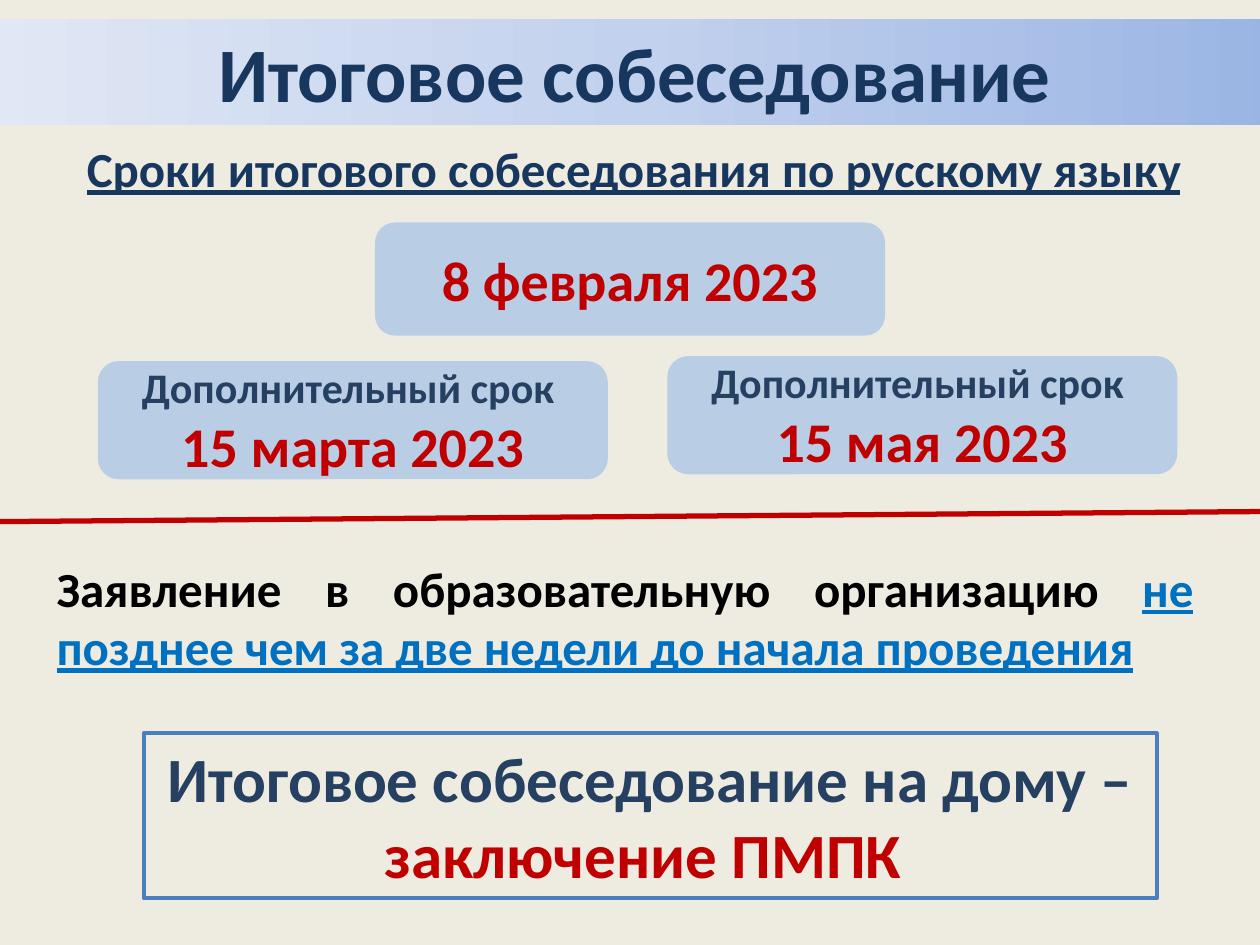
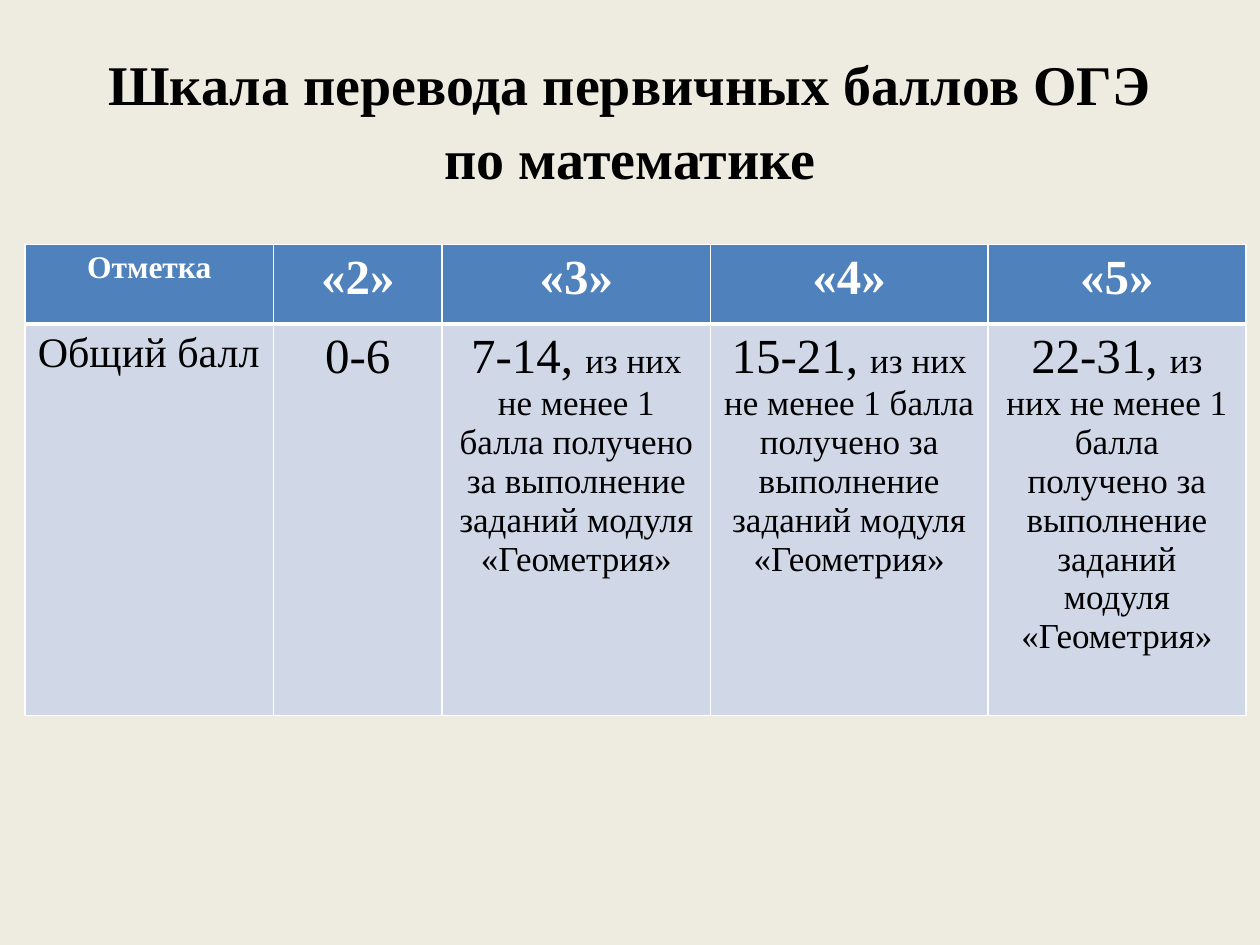
import copy
from dataclasses import dataclass

import lxml.etree
import pptx
import pptx.dml.color
import pptx.enum.shapes
import pptx.enum.text
import pptx.oxml.ns
import pptx.util

# Slide grid: 100 columns by 75 rows
COLUMNS, ROWS = 100, 75
UNIT = pptx.util.Inches(0.1)

COLORS = {
    "page": "EEECE1", "navy": "17375E", "slate": "254061", "red": "C00000",
    "link": "0070C0", "black": "000000", "white": "FFFFFF", "date": "B9CDE5",
    "frame": "4B7EBC", "header": "4F81BD", "body": "D0D8E8",
    "band_dark": "9AB5E4", "band_mid": "C2D1ED", "band_light": "E1E8F5",
}
SANS, SERIF = "Calibri", "Times New Roman"
ALIGN = pptx.enum.text.PP_ALIGN
ANCHOR = pptx.enum.text.MSO_ANCHOR
SHAPE = pptx.enum.shapes.MSO_SHAPE


@dataclass
class Box:
    left: float
    top: float
    width: float
    height: float

    def inner(self, left, top, width, height):
        """A box placed from this box's corner, in grid units."""
        return Box(self.left + left, self.top + top, width, height)

    def lengths(self):
        return [round(n * UNIT) for n in (self.left, self.top, self.width, self.height)]


def color(name):
    return pptx.dml.color.RGBColor.from_string(COLORS[name])


def qn(tag):
    return pptx.oxml.ns.qn(tag)


def add_run(paragraph, text, size=28, ink="black", font=SANS, bold=True, underline=False):
    run = paragraph.add_run()
    run.text = text
    run.font.size = pptx.util.Pt(size)
    run.font.name = font
    run.font.bold = bold
    run.font.color.rgb = color(ink)
    if underline:
        run.font.underline = True


def write(frame, paragraphs, align=ALIGN.CENTER, anchor=ANCHOR.TOP, wrap=True,
          spacing=None, **style):
    """Each paragraph is a list of (text, format) runs; style is their common format."""
    frame.word_wrap = wrap
    frame.vertical_anchor = anchor
    for i, runs in enumerate(paragraphs):
        paragraph = frame.add_paragraph() if i else frame.paragraphs[0]
        paragraph.alignment = align
        if spacing:
            paragraph.line_spacing = spacing
        for text, own in runs:
            if text == "\v":
                paragraph.add_line_break()
            else:
                add_run(paragraph, text, **{**style, **own})


def add_block(slide, box, kind=SHAPE.RECTANGLE, fill=None, line=None, weight=2):
    block = slide.shapes.add_shape(kind, *box.lengths())
    block.shadow.inherit = False
    if fill:
        block.fill.solid()
        block.fill.fore_color.rgb = color(fill)
    else:
        block.fill.background()
    if line:
        block.line.color.rgb = color(line)
        block.line.width = pptx.util.Pt(weight)
    else:
        block.line.fill.background()
    return block


def add_text(slide, box, paragraphs, **style):
    write(slide.shapes.add_textbox(*box.lengths()).text_frame, paragraphs, **style)


def new_slide(deck):
    slide = deck.slides.add_slide(deck.slide_layouts[6])
    slide.background.fill.solid()
    slide.background.fill.fore_color.rgb = color("page")
    return slide


# Interview slide regions
def heading_band(slide, box):
    band = add_block(slide, box)
    band.fill.gradient()
    band.fill.gradient_angle = 180
    stop_list = next(band._element.iter(qn("a:gsLst")))
    stop_list.insert(1, copy.deepcopy(stop_list[0]))
    shades = [(0, "band_dark"), (0.5, "band_mid"), (1, "band_light")]
    for stop, (position, shade) in zip(band.fill.gradient_stops, shades):
        stop.position = position
        stop.color.rgb = color(shade)
    write(band.text_frame, [[("Итоговое собеседование", {})]], size=44, ink="navy")


def interview_dates(slide, box):
    add_text(slide, box.inner(0, 0, 89.8, 5.7),
             [[("Сроки итогового собеседования по русскому языку", {})]],
             align=ALIGN.LEFT, wrap=False, ink="navy", underline=True)
    dates = [
        (24, 7.3, 8.7, "8 февраля 2023", False),
        (2, 18.3, 9.1, "15 марта 2023", True),
        (47.2, 17.9, 9.1, "15 мая 2023", True),
    ]
    for left, top, height, date, extra in dates:
        card = add_block(slide, box.inner(left, top, 40.2, height),
                         SHAPE.ROUNDED_RECTANGLE, fill="date", line="date")
        label = [[("Дополнительный срок ", {"size": 24, "ink": "slate"})]] if extra else []
        write(card.text_frame, label + [[(date, {})]],
              anchor=ANCHOR.MIDDLE, size=32, ink="red")


def divider(slide, box):
    left, top, width, height = box.lengths()
    rule = slide.shapes.add_connector(pptx.enum.shapes.MSO_CONNECTOR.STRAIGHT,
                                      left, top + height, left + width, top)
    rule.line.color.rgb = color("red")
    rule.line.width = pptx.util.Pt(3)
    lxml.etree.SubElement(rule._element.spPr, qn("a:effectLst"))


def application(slide, box):
    add_text(slide, box, [[
        ("Заявление в образовательную организацию ", {}),
        ("не позднее чем за две недели до начала проведения",
         {"ink": "link", "underline": True}),
    ]], align=ALIGN.JUSTIFY)


def home_interview(slide, box):
    frame = add_block(slide, box, line="frame", weight=2.25)
    write(frame.text_frame, [[
        ("Итоговое собеседование на дому – ", {"ink": "slate"}),
        ("заключение ПМПК ", {"ink": "red"}),
    ]], size=36)


# Score scale slide regions
def scale_title(slide, box):
    add_text(slide, box, [[("Шкала перевода первичных баллов ОГЭ", {}), ("\v", {}),
                           ("по математике", {})]],
             anchor=ANCHOR.MIDDLE, spacing=1.1, size=32, font=SERIF)


def set_borders(cell, **weights):
    properties = cell._tc.get_or_add_tcPr()
    for i, side in enumerate("LRTB"):
        border = lxml.etree.Element(qn(f"a:ln{side}"),
                                    w=str(int(pptx.util.Pt(weights.get(side, 1)))))
        fill = lxml.etree.SubElement(border, qn("a:solidFill"))
        lxml.etree.SubElement(fill, qn("a:srgbClr"), val=COLORS["white"])
        properties.insert(i, border)


def scale_table(slide, box):
    small = {"size": 20}
    condition = "не менее 1 балла получено за выполнение заданий модуля «Геометрия»"
    full_condition = ("из них " + condition, small)
    header = [[("Отметка", {"size": 18})]] + [[(f"«{mark}»", {})] for mark in range(2, 6)]
    scores = [
        [("Общий балл", {"size": 24})],
        [("0-6", {})],
        [("7-14, ", {}), full_condition],
        [("15-21, ", {}), ("из них", small), (" ", {}), (condition, small)],
        [("22-31, ", {}), full_condition],
    ]
    table = slide.shapes.add_table(2, len(header), *box.lengths()).table
    for column, width in zip(table.columns, (19.7, 13.4, 21.3, 22, 20.5)):
        column.width = round(width * UNIT)
    for row, height in zip(table.rows, (6.3, 31.1)):
        row.height = round(height * UNIT)
    for r, texts in enumerate((header, scores)):
        for c, runs in enumerate(texts):
            cell = table.cell(r, c)
            cell.fill.solid()
            cell.fill.fore_color.rgb = color("body" if r else "header")
            set_borders(cell, **({"T": 3} if r else {"B": 3}))
            write(cell.text_frame, [runs], font=SERIF, bold=not r,
                  ink="black" if r else "white",
                  align=ALIGN.JUSTIFY if r and not c else ALIGN.CENTER)


def interview_slide(deck):
    slide = new_slide(deck)
    heading_band(slide, Box(-1.2, 1.5, 103.2, 8.4))
    interview_dates(slide, Box(5.9, 10.5, 89.8, 27.4))
    divider(slide, Box(0, 40.6, COLUMNS, 0.8))
    application(slide, Box(3.5, 43.8, 92.2, 10.4))
    home_interview(slide, Box(11.4, 58.2, 80.4, 13.1))


def scale_slide(deck):
    slide = new_slide(deck)
    scale_title(slide, Box(5, 3, 90, 12.5))
    scale_table(slide, Box(2, 19.4, 96.9, 37.4))


def main():
    deck = pptx.Presentation()
    deck.slide_width = COLUMNS * UNIT
    deck.slide_height = ROWS * UNIT
    interview_slide(deck)
    scale_slide(deck)
    deck.save("out.pptx")


if __name__ == "__main__":
    main()
